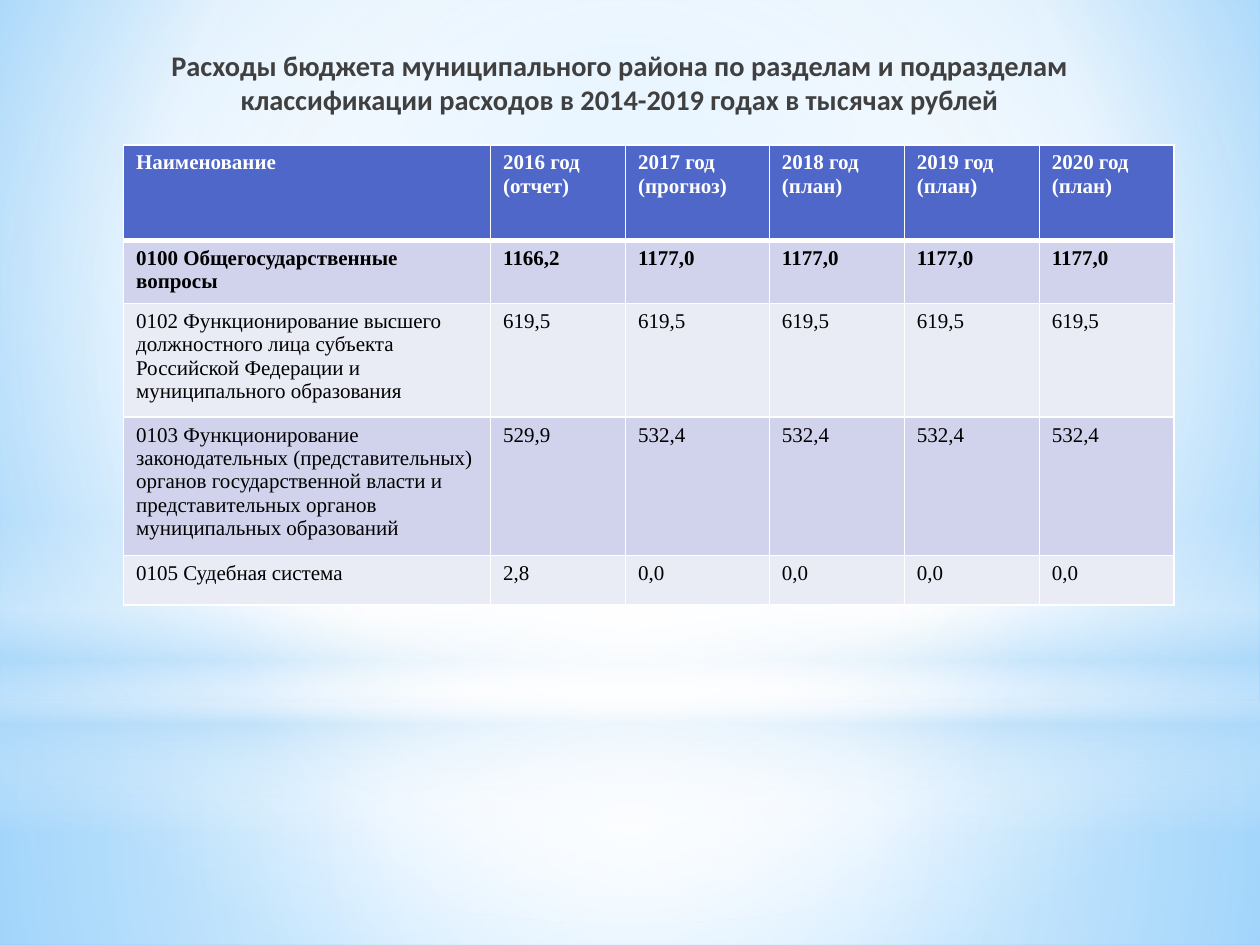
import pptx
import pptx.dml.color
import pptx.enum.shapes
import pptx.enum.text
import pptx.oxml
import pptx.oxml.ns
import pptx.util
from lxml import etree

Cm = pptx.util.Cm
Pt = pptx.util.Pt
qn = pptx.oxml.ns.qn
SHAPES = pptx.enum.shapes.MSO_SHAPE
ALIGN = pptx.enum.text.PP_ALIGN
ANCHOR = pptx.enum.text.MSO_ANCHOR

TITLE = ("Расходы бюджета муниципального района по разделам и подразделам "
         "классификации расходов в 2014-2019 годах в тысячах рублей")
HEADER = ["Наименование", "2016 год\n(отчет)", "2017 год\n(прогноз)",
          "2018 год\n(план)", "2019 год\n(план)", "2020 год\n(план)"]
ROWS = [
    ["0100 Общегосударственные вопросы",
     "1166,2", "1177,0", "1177,0", "1177,0", "1177,0"],
    ["0102 Функционирование высшего должностного лица субъекта "
     "Российской Федерации и муниципального образования",
     "619,5", "619,5", "619,5", "619,5", "619,5"],
    ["0103 Функционирование законодательных (представительных) органов "
     "государственной власти и представительных органов "
     "муниципальных образований",
     "529,9", "532,4", "532,4", "532,4", "532,4"],
    ["0105 Судебная система", "2,8", "0,0", "0,0", "0,0", "0,0"],
]
COL_WIDTHS = [7.4, 2.72, 2.9, 2.72, 2.72, 2.72]
ROW_HEIGHTS = [1.93, 1.18, 2.14, 2.6, 0.99]

COLORS = {
    "white": "FFFFFF", "black": "000000", "title": "404040",
    "header": "4E67C8", "odd": "D0D3EB", "even": "E9EBF5",
    "sky": "9ED5FF", "edge": "5BB9FF", "haze": "B4DCFA",
}

# Gradient stops: position %, colour, opacity %
BACKGROUND = [(0, "sky", 100), (60, "white", 100), (100, "edge", 100)]
CENTRE = (50, 50, 50, 50)
# Shape, top, height, stops, focus rectangle (None for a vertical gradient)
GLOWS = [
    (SHAPES.RECTANGLE, 14.17, 4.88,
     [(0, "white", 91), (37, "white", 76), (100, "haze", 79)], CENTRE),
    (SHAPES.RECTANGLE, 0, 14.17,
     [(0, "white", 89), (48, "white", 62), (100, "haze", 79)], CENTRE),
    (SHAPES.RECTANGLE, 10.46, 6.35,
     [(0, "white", 0), (29, "white", 30), (45, "haze", 40),
      (55, "white", 26), (65, "haze", 60), (100, "white", 0)], None),
    (SHAPES.OVAL, 4.45, 14.17,
     [(0, "white", 100), (56, "white", 0)], CENTRE),
]


def rgb(name):
    return pptx.dml.color.RGBColor.from_string(COLORS[name])


def set_gradient(props, stops, focus):
    """Replace the solid fill in props by a circular or vertical gradient."""
    grad = etree.Element(qn("a:gradFill"), rotWithShape="1")
    gs_list = etree.SubElement(grad, qn("a:gsLst"))
    for pos, color, opacity in stops:
        gs = etree.SubElement(gs_list, qn("a:gs"), pos=str(pos * 1000))
        clr = etree.SubElement(gs, qn("a:srgbClr"), val=COLORS[color])
        if opacity < 100:
            etree.SubElement(clr, qn("a:alpha"), val=str(opacity * 1000))
    if focus:
        circle = etree.SubElement(grad, qn("a:path"), path="circle")
        sides = {k: str(v * 1000) for k, v in zip("ltrb", focus)}
        etree.SubElement(circle, qn("a:fillToRect"), **sides)
    else:
        etree.SubElement(grad, qn("a:lin"), ang="5400000", scaled="0")
    props.replace(props.find(qn("a:solidFill")), grad)


def set_borders(cell, widths):
    """Draw white borders; widths are points for left, right, top, bottom."""
    tc_pr = cell._tc.get_or_add_tcPr()
    for i, (side, width) in enumerate(zip("LRTB", widths)):
        ln = etree.Element(qn("a:ln" + side), w=str(Pt(width)))
        fill = etree.SubElement(ln, qn("a:solidFill"))
        etree.SubElement(fill, qn("a:srgbClr"), val=COLORS["white"])
        tc_pr.insert(i, ln)


def add_run(p, text, font, size, color, bold):
    r = p.add_run()
    r.text = text
    r.font.name = font
    r.font.size = Pt(size)
    r.font.bold = bold
    r.font.color.rgb = rgb(color)


def add_backdrop(s):
    s.background.fill.solid()
    bg_pr = s._element.find(".//" + qn("p:bgPr"))
    set_gradient(bg_pr, BACKGROUND, (20, 10, 20, 60))
    for kind, top, height, stops, focus in GLOWS:
        sp = s.shapes.add_shape(kind, 0, Cm(top), Cm(25.4), Cm(height))
        sp.shadow.inherit = False
        sp.line.fill.background()
        sp.fill.solid()
        set_gradient(sp._element.spPr, stops, focus)


def add_title(s):
    sp = s.shapes.add_textbox(Cm(1.27), Cm(0.81), Cm(22.43), Cm(1.7))
    tf = sp.text_frame
    tf.word_wrap = True
    tf.vertical_anchor = ANCHOR.MIDDLE
    p = tf.paragraphs[0]
    p.alignment = ALIGN.CENTER
    add_run(p, TITLE, "Calibri", 16.2, "title", True)


def add_budget_table(s):
    data = [HEADER] + ROWS
    table = s.shapes.add_table(
        len(data), len(HEADER), Cm(2.49), Cm(2.92),
        Cm(sum(COL_WIDTHS)), Cm(sum(ROW_HEIGHTS))).table
    for col, width in zip(table.columns, COL_WIDTHS):
        col.width = Cm(width)
    for i, (row, height) in enumerate(zip(data, ROW_HEIGHTS)):
        table.rows[i].height = Cm(height)
        fill = "header" if i == 0 else "odd" if i % 2 else "even"
        for j, text in enumerate(row):
            cell = table.cell(i, j)
            cell.fill.solid()
            cell.fill.fore_color.rgb = rgb(fill)
            set_borders(cell, (1, 1, 3 if i == 1 else 1, 3 if i == 0 else 1))
            tf = cell.text_frame
            for k, line in enumerate(text.split("\n")):
                p = tf.add_paragraph() if k else tf.paragraphs[0]
                p.alignment = ALIGN.LEFT
                add_run(p, line, "Times New Roman", 12,
                        "black" if i else "white", i < 2)


def main():
    prs = pptx.Presentation()
    prs.slide_width, prs.slide_height = Cm(25.4), Cm(19.05)
    s = prs.slides.add_slide(prs.slide_layouts[6])
    add_backdrop(s)
    add_title(s)
    add_budget_table(s)
    prs.save("out.pptx")


if __name__ == "__main__":
    main()
